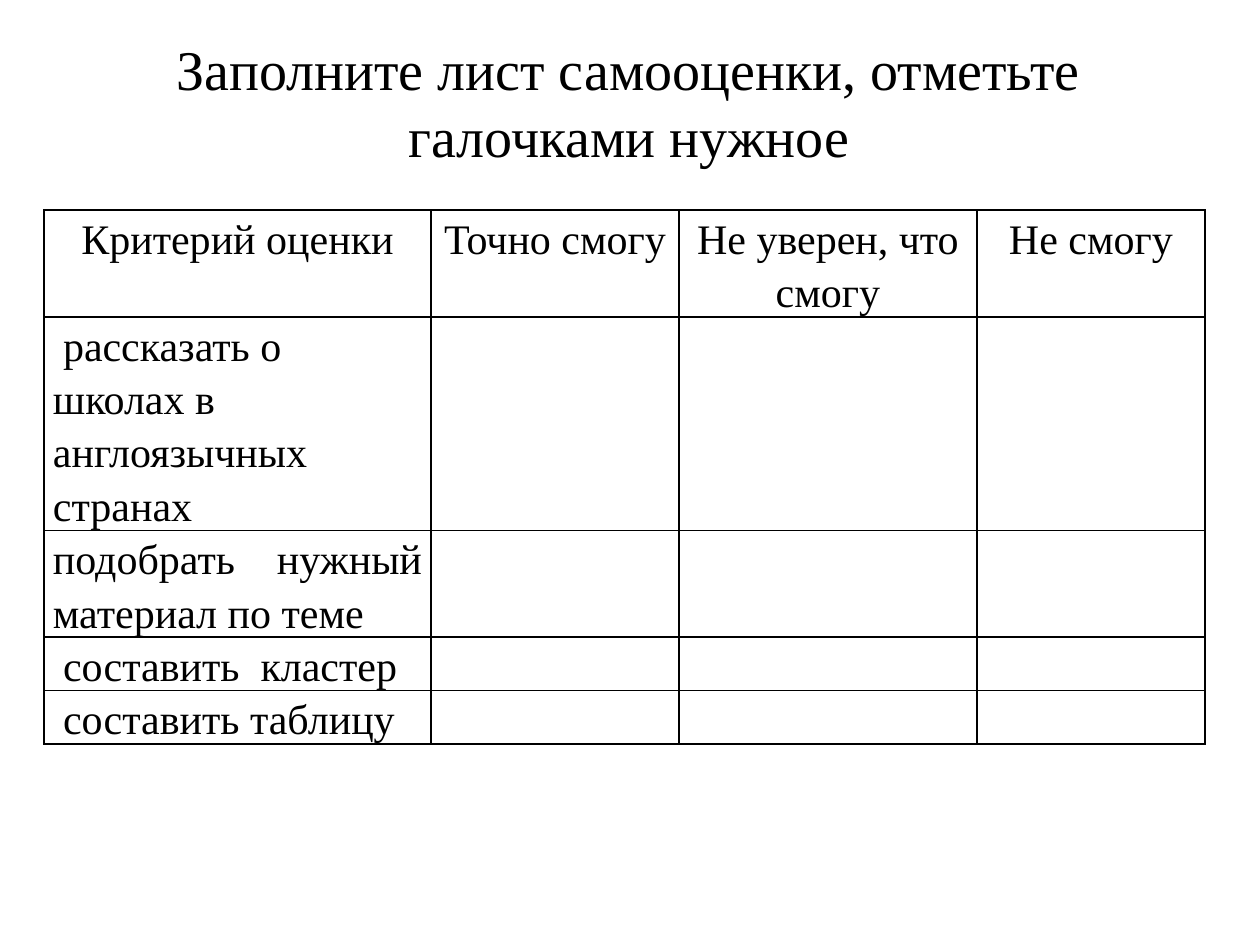
import pptx
import pptx.util
import pptx.dml.color
import pptx.enum.text
import pptx.oxml
import pptx.oxml.ns
import lxml.etree

PX = 914400 // 126
ALIGN = pptx.enum.text.PP_ALIGN
THEME = {
    "font": "Times New Roman",
    "ink": pptx.dml.color.RGBColor(0, 0, 0),
    "title": pptx.util.Pt(32),
    "body": pptx.util.Pt(24),
    "border": pptx.util.Pt(1),
    "line_spacing": 1.15,
}
COLUMNS = [387, 248, 298, 228]
LINE_HEIGHT = 53
HEADINGS = ["Критерий оценки", "Точно смогу", "Не уверен, что смогу", "Не смогу"]
CRITERIA = [
    ("рассказать о школах в англоязычных странах", 4, ALIGN.LEFT, 10),
    ("подобрать нужный материал по теме", 2, ALIGN.JUSTIFY, 0),
    ("составить  кластер", 1, ALIGN.JUSTIFY, 10),
    ("составить таблицу", 1, ALIGN.JUSTIFY, 10),
]


def px(length):
    return pptx.util.Emu(length * PX)


def apply_format(target, values):
    for name, value in values.items():
        setattr(target, name, value)


def write(para, text, size, align):
    para.alignment = align
    span = para.add_run()
    span.text = text
    apply_format(span.font, {"name": THEME["font"], "size": size})
    span.font.color.rgb = THEME["ink"]


def add_title(page, left, top, width, height):
    box = page.shapes.add_textbox(px(left), px(top), px(width), px(height))
    apply_format(box.text_frame, {
        "word_wrap": True,
        "vertical_anchor": pptx.enum.text.MSO_ANCHOR.MIDDLE,
        "margin_bottom": px(42),
    })
    write(box.text_frame.paragraphs[0],
          "Заполните лист самооценки, отметьте галочками нужное",
          THEME["title"], ALIGN.CENTER)


def add_borders(cell):
    properties = cell._tc.get_or_add_tcPr()
    for position, side in enumerate(("lnL", "lnR", "lnT", "lnB")):
        line = lxml.etree.Element(pptx.oxml.ns.qn("a:" + side), w=str(THEME["border"]))
        fill = lxml.etree.SubElement(line, pptx.oxml.ns.qn("a:solidFill"))
        lxml.etree.SubElement(fill, pptx.oxml.ns.qn("a:srgbClr"), val=str(THEME["ink"]))
        properties.insert(position, line)


def style_cell(cell):
    apply_format(cell, {
        "margin_left": px(9), "margin_right": px(9),
        "margin_top": 0, "margin_bottom": 0,
    })
    cell.fill.background()
    add_borders(cell)


def fill_cell(cell, text, align, indent=0):
    para = cell.text_frame.paragraphs[0]
    para.line_spacing = THEME["line_spacing"]
    write(para, text, THEME["body"], align)
    if indent:
        para._p.get_or_add_pPr().set("indent", str(px(indent)))


def add_checklist(page, left, top):
    line_counts = [2] + [lines for _, lines, _, _ in CRITERIA]
    table = page.shapes.add_table(
        len(line_counts), len(COLUMNS), px(left), px(top),
        px(sum(COLUMNS)), px(LINE_HEIGHT * sum(line_counts))).table
    apply_format(table, {"first_row": False, "horz_banding": False})
    for column, width in zip(table.columns, COLUMNS):
        column.width = px(width)
    for row, lines in zip(table.rows, line_counts):
        row.height = px(LINE_HEIGHT * lines)
    for cell in table.iter_cells():
        style_cell(cell)
    for index, heading in enumerate(HEADINGS):
        fill_cell(table.cell(0, index), heading, ALIGN.CENTER)
    for index, (text, _, align, indent) in enumerate(CRITERIA, start=1):
        fill_cell(table.cell(index, 0), text, align, indent)


def main():
    deck = pptx.Presentation()
    apply_format(deck, {"slide_width": px(1260), "slide_height": px(945)})
    page = deck.slides.add_slide(deck.slide_layouts[6])
    add_checklist(page, 44, 210)
    add_title(page, 54, 26, 1150, 187)
    deck.save("out.pptx")


if __name__ == "__main__":
    main()
